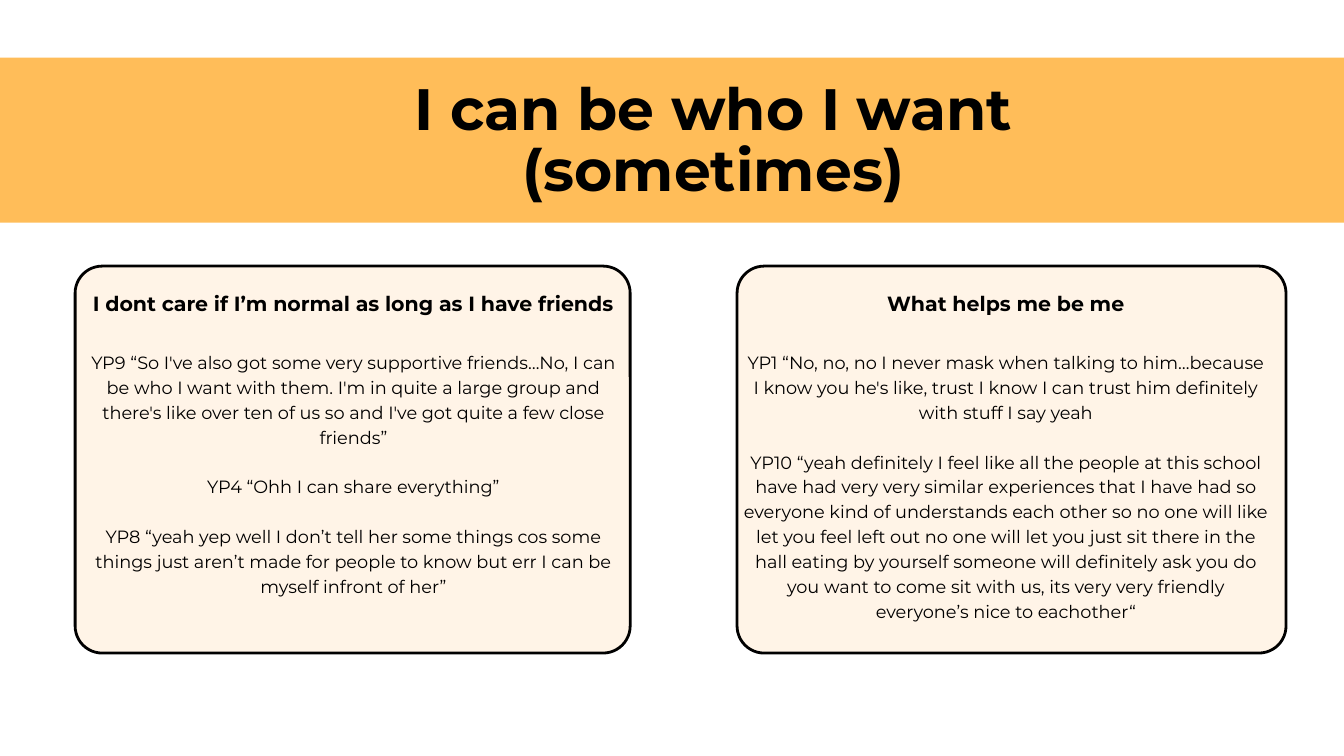
from pptx import Presentation
from pptx.dml.color import RGBColor
from pptx.enum.shapes import MSO_SHAPE as Shape
from pptx.enum.text import MSO_ANCHOR as Anchor, PP_ALIGN as Align
from pptx.util import Cm, Pt

CARD_TOP, CARD_HEIGHT = 10.06, 14.63
HEADING_TOP, HEADING_HEIGHT = 10.85, 1.04
QUOTES_TOP, QUOTES_WIDTH = 13.18, 19.86

# Horizontal places are (left, width) in centimetres.
CARDS = [
    {
        "card": (2.84, 20.98),
        "heading_place": (3.48, 19.74),
        "quotes_left": 3.43,
        "quotes_height": 10.16,
        "heading": "I dont care if I’m normal as long as I have friends",
        "quotes": [
            "YP9 “So I've also got some very supportive friends…No, I can be who I "
            "want with them. I'm in quite a large group and there's like over ten of "
            "us so and I've got quite a few close friends”",
            "YP4 “Ohh I can share everything”",
            "YP8 “yeah yep well I don’t tell her some things cos some things just "
            "aren’t made for people to know but err I can be myself infront of her”",
        ],
    },
    {
        "card": (27.86, 20.75),
        "heading_place": (33.53, 8.97),
        "quotes_left": 28.09,
        "quotes_height": 12.01,
        "heading": "What helps me be me",
        "quotes": [
            "YP1 “No, no, no I never mask when talking to him…because I know you he's "
            "like, trust I know I can trust him definitely with stuff I say yeah",
            "YP10 “yeah definitely I feel like all the people at this school have had "
            "very very similar experiences that I have had so everyone kind of "
            "understands each other so no one will like let you feel left out no one "
            "will let you just sit there in the hall eating by yourself someone will "
            "definitely ask you do you want to come sit with us, its very very "
            "friendly everyone’s nice to eachother“",
        ],
    },
]


def color(hex_string):
    return RGBColor.from_string(hex_string)


class SlideBuilder:
    font = "Montserrat"
    ink = "000000"
    band_fill = "FFBD59"
    card_fill = "FFF4E7"

    def __init__(self, presentation):
        self.slide = presentation.slides.add_slide(presentation.slide_layouts[5])

    def fill_text(self, shape, paragraphs, size, spacing, bold=False, gap=0):
        """Fill a shape with centred paragraphs, gap points apart."""
        frame = shape.text_frame
        frame.word_wrap = True
        frame.vertical_anchor = Anchor.TOP
        frame.margin_left = frame.margin_right = 0
        frame.margin_top = frame.margin_bottom = 0
        for index, text in enumerate(paragraphs):
            paragraph = frame.add_paragraph() if index else frame.paragraphs[0]
            paragraph.alignment = Align.CENTER
            paragraph.line_spacing = Pt(spacing)
            paragraph.space_before = Pt(gap if index else 0)
            run = paragraph.add_run()
            run.text = text
            run.font.name = self.font
            run.font.size = Pt(size)
            run.font.bold = bold
            run.font.color.rgb = color(self.ink)

    def title(self, text, left, top, width, height):
        title = self.slide.shapes.title
        title.left, title.top = Cm(left), Cm(top)
        title.width, title.height = Cm(width), Cm(height)
        self.fill_text(title, [text], 62.5, 65.6, bold=True)
        # Bring the placeholder in front of the band.
        title._element.getparent().append(title._element)

    def text(self, paragraphs, left, top, width, height, **style):
        box = self.slide.shapes.add_textbox(Cm(left), Cm(top), Cm(width), Cm(height))
        self.fill_text(box, paragraphs, **style)

    def shape(self, kind, left, top, width, height, fill):
        shape = self.slide.shapes.add_shape(
            kind, Cm(left), Cm(top), Cm(width), Cm(height))
        shape.shadow.inherit = False
        shape.fill.solid()
        shape.fill.fore_color.rgb = color(fill)
        shape.line.fill.background()
        return shape

    def band(self, left, top, width, height):
        self.shape(Shape.RECTANGLE, left, top, width, height, self.band_fill)

    def card(self, left, width):
        card = self.shape(Shape.ROUNDED_RECTANGLE, left, CARD_TOP, width,
                          CARD_HEIGHT, self.card_fill)
        card.adjustments[0] = 0.07
        card.line.color.rgb = color(self.ink)
        card.line.width = Pt(3)


def main():
    presentation = Presentation()
    presentation.slide_width, presentation.slide_height = Cm(50.8), Cm(28.58)
    builder = SlideBuilder(presentation)

    builder.band(-2.34, 2.18, 55.6, 6.24)
    builder.title("I can be who I want (sometimes)", 12.55, 3.07, 28.83, 7.01)
    for card in CARDS:
        builder.card(*card["card"])
        left, width = card["heading_place"]
        builder.text([card["heading"]], left, HEADING_TOP, width, HEADING_HEIGHT,
                     size=22, spacing=30.8, bold=True)
        builder.text(card["quotes"], card["quotes_left"], QUOTES_TOP, QUOTES_WIDTH,
                     card["quotes_height"], size=19, spacing=26.6, gap=26.6)

    presentation.save("out.pptx")


if __name__ == "__main__":
    main()
